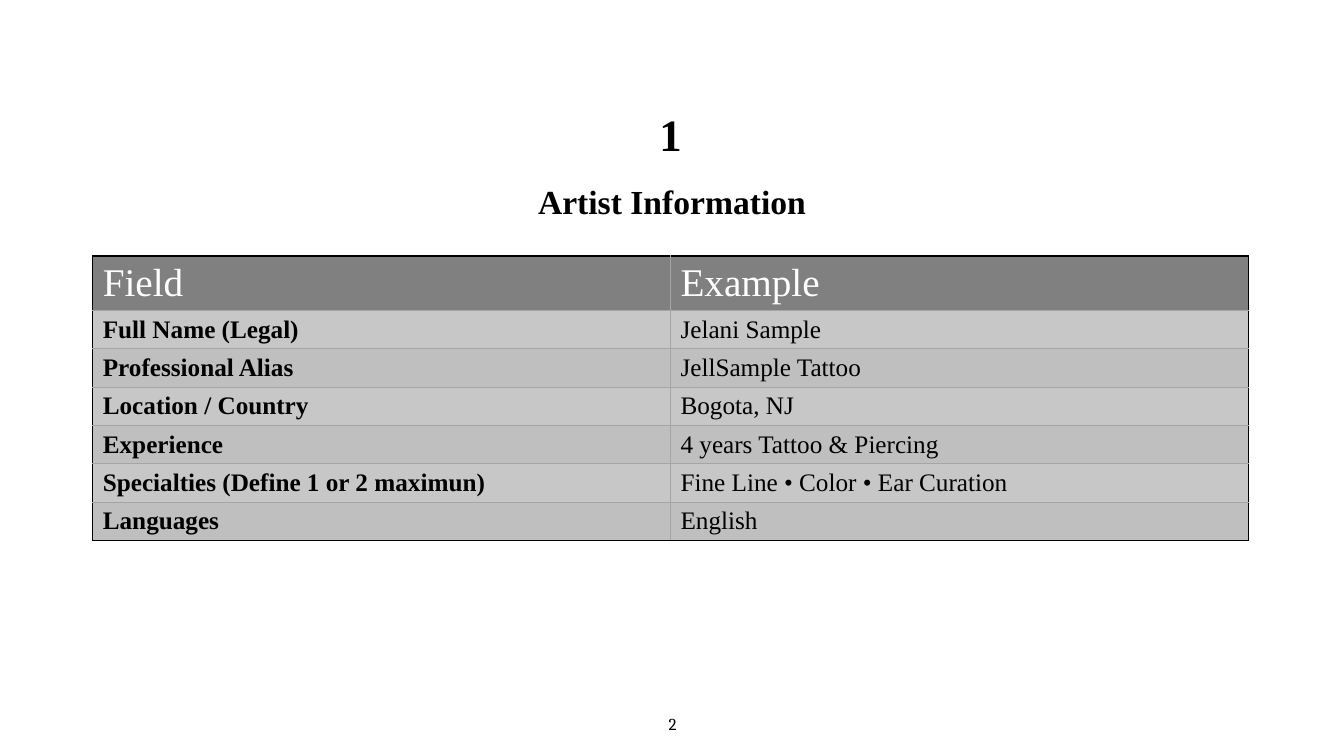
from lxml import etree
from pptx import Presentation
from pptx.dml.color import RGBColor
from pptx.enum.text import MSO_ANCHOR, PP_ALIGN
from pptx.oxml.ns import qn
from pptx.util import Inches, Pt

CENTER = PP_ALIGN.CENTER
MIDDLE, TOP = MSO_ANCHOR.MIDDLE, MSO_ANCHOR.TOP
SERIF, FOOTER_FONT = "Times New Roman", "Cambria"
BLACK, WHITE = "000000", "FFFFFF"
HEADER_FILL, BAND_FILLS = "808080", ("C7C7C7", "BFBFBF")
OUTER_EDGE, INNER_EDGE = (BLACK, 0.96), ("A5A5A5", 0.5)

HEADINGS = [
    ("1", (6.44, 1.01, 0.42, 0.64), SERIF, 32, True, TOP, False),
    ("Artist Information", (0.75, 1.74, 11.83, 0.5), SERIF, 24, True, MIDDLE, True),
    ("2", (5.17, 6.98, 3, 0.4), FOOTER_FONT, 12, False, MIDDLE, True),
]
ARTIST_FIELDS = [
    ("Field", "Example"),
    ("Full Name (Legal)", "Jelani Sample"),
    ("Professional Alias", "JellSample Tattoo"),
    ("Location / Country", "Bogota, NJ"),
    ("Experience", "4 years Tattoo & Piercing"),
    ("Specialties (Define 1 or 2 maximun)", "Fine Line • Color • Ear Curation"),
    ("Languages", "English"),
]
TABLE_LEFT, TABLE_TOP = 0.92, 2.54
COLUMN_WIDTH, HEADER_HEIGHT, ROW_HEIGHT = 5.73, 0.54, 0.38
CELL_PAD_X, CELL_PAD_Y = 0.1, 0.045


def color(value):
    return RGBColor.from_string(value)


def style(paragraph, font_name, size, bold, text_color):
    for run in paragraph.runs:
        run.font.name = font_name
        run.font.size = Pt(size)
        run.font.bold = bold
        run.font.color.rgb = color(text_color)


def add_heading(slide, text, box, font_name, size, bold, anchor, wrap):
    frame = slide.shapes.add_textbox(*map(Inches, box)).text_frame
    frame.word_wrap = wrap
    frame.vertical_anchor = anchor
    frame.text = text
    frame.paragraphs[0].alignment = CENTER
    style(frame.paragraphs[0], font_name, size, bold, BLACK)


def set_borders(cell, outer_sides):
    properties = cell._tc.get_or_add_tcPr()
    for position, (side, is_outer) in enumerate(zip("LRTB", outer_sides)):
        edge_color, width = OUTER_EDGE if is_outer else INNER_EDGE
        line = etree.Element(qn(f"a:ln{side}"), w=str(int(Pt(width))))
        fill = etree.SubElement(line, qn("a:solidFill"))
        etree.SubElement(fill, qn("a:srgbClr"), val=edge_color)
        properties.insert(position, line)


def add_artist_table(slide):
    row_count, column_count = len(ARTIST_FIELDS), len(ARTIST_FIELDS[0])
    height = HEADER_HEIGHT + ROW_HEIGHT * (row_count - 1)
    table = slide.shapes.add_table(
        row_count, column_count, Inches(TABLE_LEFT), Inches(TABLE_TOP),
        Inches(COLUMN_WIDTH * column_count), Inches(height)).table
    for r, entries in enumerate(ARTIST_FIELDS):
        is_header = r == 0
        table.rows[r].height = Inches(HEADER_HEIGHT if is_header else ROW_HEIGHT)
        for c, entry in enumerate(entries):
            cell = table.cell(r, c)
            cell.margin_left = cell.margin_right = Inches(CELL_PAD_X)
            cell.margin_top = cell.margin_bottom = Inches(CELL_PAD_Y)
            cell.vertical_anchor = MIDDLE
            cell.fill.solid()
            cell.fill.fore_color.rgb = color(HEADER_FILL if is_header else BAND_FILLS[(r - 1) % 2])
            cell.text_frame.text = entry
            style(cell.text_frame.paragraphs[0], SERIF, 28 if is_header else 18,
                  c == 0 and not is_header, WHITE if is_header else BLACK)
            set_borders(cell, (c == 0, c == column_count - 1, is_header, r == row_count - 1))


def main():
    deck = Presentation()
    deck.slide_width, deck.slide_height = Inches(13.33), Inches(7.5)
    slide = deck.slides.add_slide(deck.slide_layouts[6])
    add_artist_table(slide)
    for heading in HEADINGS:
        add_heading(slide, *heading)
    deck.save("out.pptx")


if __name__ == "__main__":
    main()
